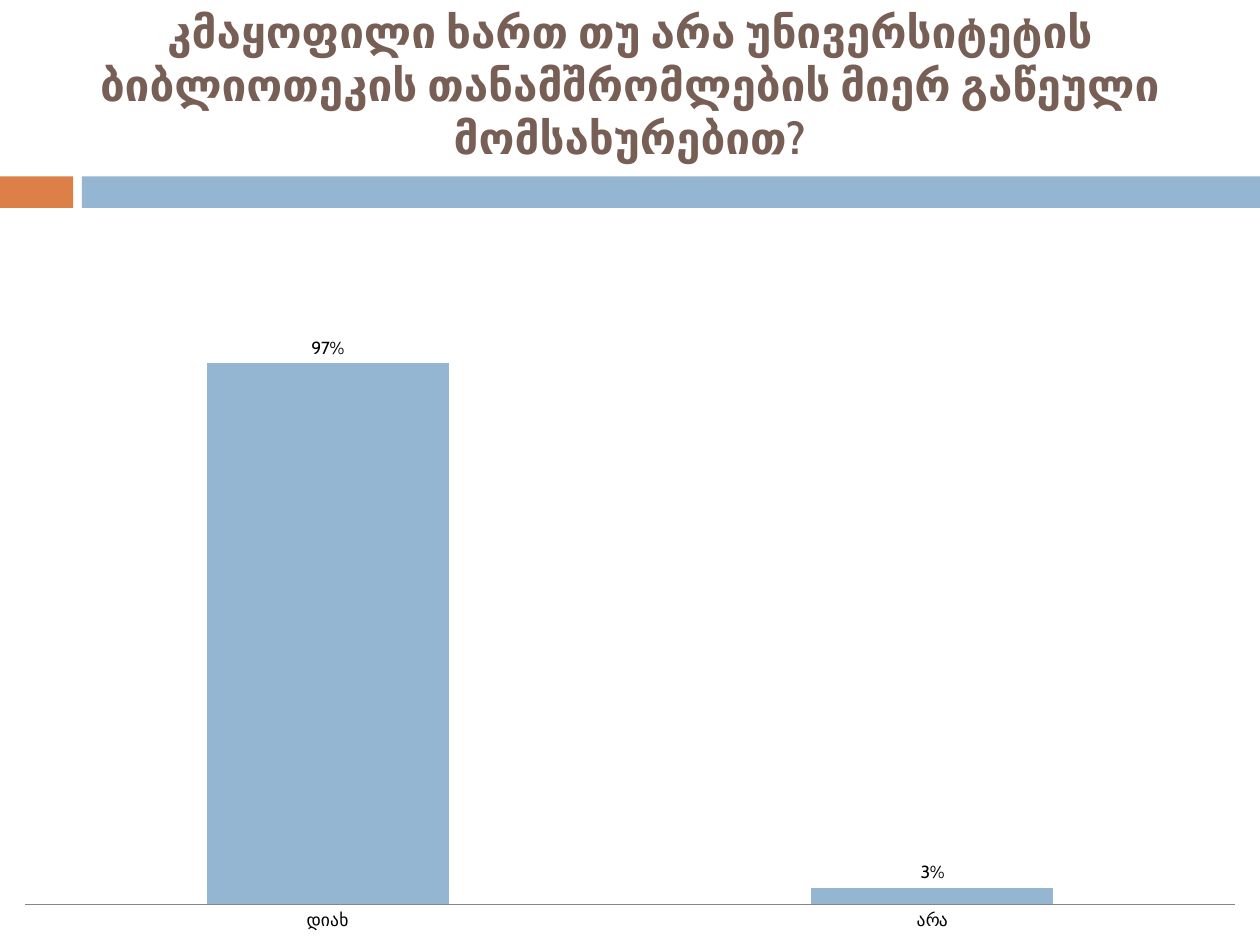
"""Build a survey slide with a title, a two-part band and a column chart."""
from pptx import Presentation
from pptx.chart.data import CategoryChartData
from pptx.dml.color import RGBColor
from pptx.enum.chart import XL_CHART_TYPE, XL_LABEL_POSITION, XL_TICK_MARK
from pptx.enum.shapes import MSO_SHAPE
from pptx.enum.text import MSO_ANCHOR, MSO_AUTO_SIZE, PP_ALIGN
from pptx.util import Inches, Pt


def paint(color, code):
    color.rgb = RGBColor.from_string(code)


def write(shape, text, size=18, code="000000", bold=False, align=PP_ALIGN.LEFT):
    frame = shape.text_frame
    frame.word_wrap = True
    frame.auto_size = MSO_AUTO_SIZE.NONE
    frame.vertical_anchor = MSO_ANCHOR.MIDDLE
    line = frame.paragraphs[0]
    line.alignment = align
    run = line.add_run()
    run.text = text
    run.font.name = "Cabin"
    run.font.size = Pt(size)
    run.font.bold = bold
    paint(run.font.color, code)


deck = Presentation()
deck.slide_width = Inches(10)
deck.slide_height = Inches(7.5)
slide = deck.slides.add_slide(deck.slide_layouts[5])

for left, width, code in [(0, 0.58, "DD8047"), (0.65, 9.35, "94B6D2")]:
    band = slide.shapes.add_shape(
        MSO_SHAPE.RECTANGLE, Inches(left), Inches(1.4), Inches(width), Inches(0.25))
    band.shadow.inherit = False
    band.fill.solid()
    paint(band.fill.fore_color, code)
    band.line.fill.background()

title = slide.shapes.title
title.left, title.top = Inches(0), Inches(0)
title.width, title.height = Inches(10), Inches(1.33)
write(title,
      "კმაყოფილი ხართ თუ არა უნივერსიტეტის ბიბლიოთეკის "
      "თანამშრომლების მიერ გაწეული მომსახურებით?",
      size=25.2, code="775F55", bold=True, align=PP_ALIGN.CENTER)

data = CategoryChartData(number_format="0%")
data.categories = ["დიახ", "არა"]
data.add_series("Series 1", [0.97, 0.03])
chart = slide.shapes.add_chart(
    XL_CHART_TYPE.COLUMN_CLUSTERED,
    Inches(0), Inches(1.75), Inches(10), Inches(5.75), data).chart
chart.has_legend = False
chart.has_title = False
chart.font.name = "Cabin"
chart.font.size = Pt(10)
paint(chart.font.color, "000000")

axis = chart.category_axis
axis.major_tick_mark = XL_TICK_MARK.NONE
axis.format.line.width = Pt(0.75)
paint(axis.format.line.color, "868686")

scale = chart.value_axis
scale.visible = False
scale.has_major_gridlines = False
scale.minimum_scale = 0
scale.maximum_scale = 1.2
scale.tick_labels.number_format = "0%"
scale.tick_labels.number_format_is_linked = False

plot = chart.plots[0]
plot.vary_by_categories = False
plot.gap_width = 150
bars = plot.series[0]
bars.format.fill.solid()
paint(bars.format.fill.fore_color, "94B6D2")
plot.has_data_labels = True
labels = plot.data_labels
labels.show_value = True
labels.number_format = "0%"
labels.number_format_is_linked = False
labels.position = XL_LABEL_POSITION.OUTSIDE_END

deck.save("out.pptx")
